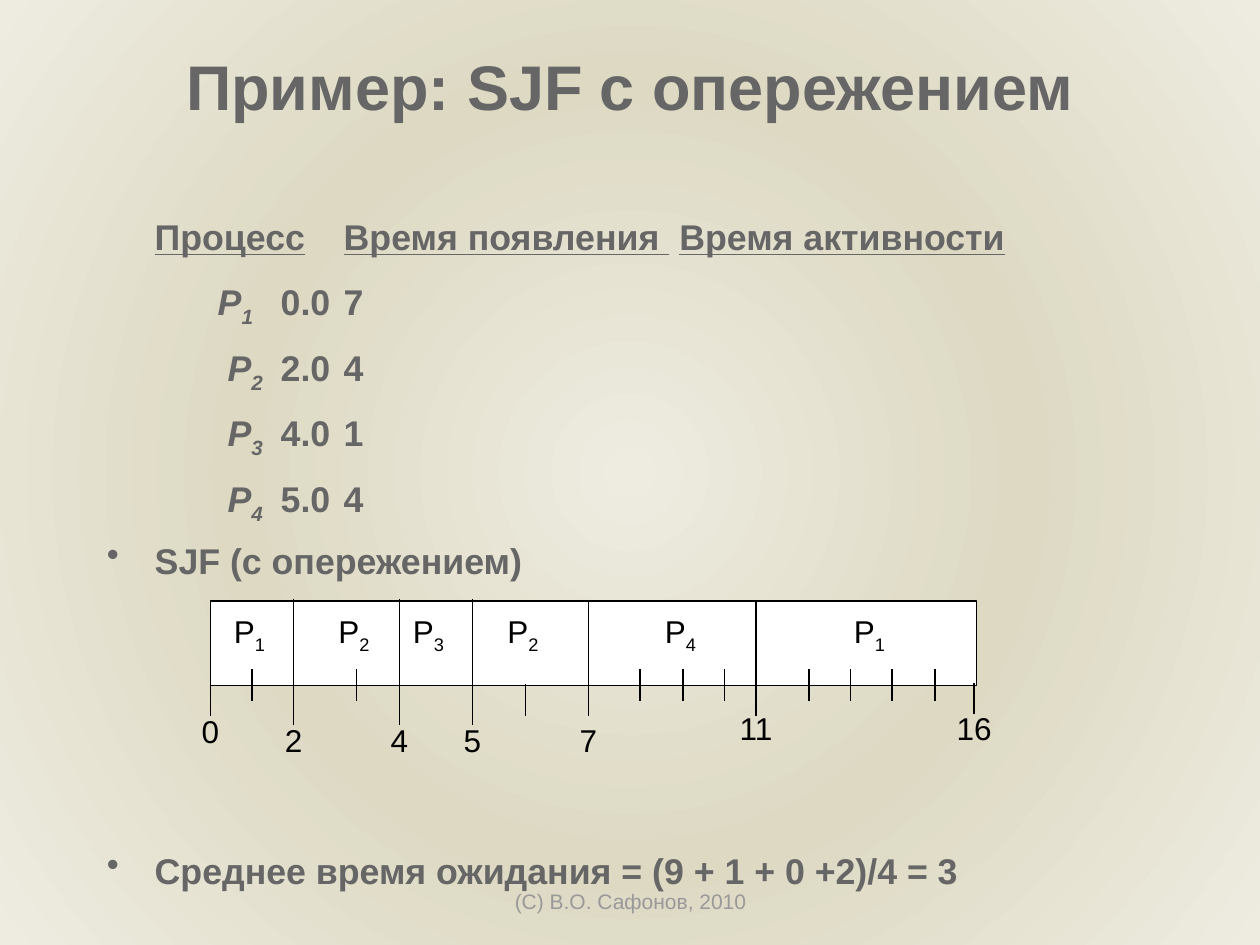
from dataclasses import dataclass

import lxml.etree
import pptx
import pptx.dml.color
import pptx.enum.shapes
import pptx.enum.text
import pptx.oxml
import pptx.oxml.ns
import pptx.slide
import pptx.util

Inches = pptx.util.Inches
Pt = pptx.util.Pt
qn = pptx.oxml.ns.qn
ALIGN = pptx.enum.text.PP_ALIGN
ANCHOR = pptx.enum.text.MSO_ANCHOR

FONT = "Arial"
COLORS = {
    "edge": "EEECE1",
    "ring": "DDD9C3",
    "text": "666666",
    "footer": "999999",
    "chart": "000000",
    "bar": "FFFFFF",
}


@dataclass
class Run:
    text: str
    italic: bool = False
    underline: bool = False
    subscript: bool = False
    spacing: float = 0  # extra points after each letter


@dataclass
class Paragraph:
    runs: list[Run]
    space_before: float = 0
    bullet: bool = False


@dataclass
class Process:
    number: int
    arrival: str
    burst: int


@dataclass
class Boundary:
    time: int
    x: float
    top: float
    bottom: float
    label_top: float


@dataclass
class Segment:
    process: int
    center: float


PROCESSES = [
    Process(1, "0.0", 7),
    Process(2, "2.0", 4),
    Process(3, "4.0", 1),
    Process(4, "5.0", 4),
]
BAR_LEFT, BAR_TOP, BAR_WIDTH, BAR_HEIGHT = 1.67, 4.77, 6.08, 0.67
BOUNDARIES = [
    Boundary(0, 1.67, 4.77, 5.68, 5.6),
    Boundary(2, 2.33, 4.75, 5.75, 5.67),
    Boundary(4, 3.17, 4.75, 5.75, 5.67),
    Boundary(5, 3.75, 4.75, 5.75, 5.67),
    Boundary(7, 4.67, 4.77, 5.68, 5.67),
    Boundary(11, 6, 4.77, 5.68, 5.58),
    Boundary(16, 7.73, 5.42, 5.67, 5.58),
]
SEGMENTS = [
    Segment(1, 1.98),
    Segment(2, 2.81),
    Segment(3, 3.4),
    Segment(2, 4.15),
    Segment(4, 5.4),
    Segment(1, 6.9),
]
MINOR_TICKS = [2, 2.83, 5.08, 5.42, 5.75, 6.42, 6.75, 7.08, 7.42]


def rgb(name: str) -> pptx.dml.color.RGBColor:
    return pptx.dml.color.RGBColor.from_string(COLORS[name])


def set_background(slide: pptx.slide.Slide) -> None:
    """Radial gradient: light centre, darker ring, light edge."""
    stops = "".join(
        f'<a:gs pos="{position}"><a:srgbClr val="{COLORS[name]}"/></a:gs>'
        for position, name in ((0, "edge"), (50000, "ring"), (100000, "edge"))
    )
    background = pptx.oxml.parse_xml(
        f'<p:bg {pptx.oxml.ns.nsdecls("p", "a")}><p:bgPr><a:gradFill rotWithShape="1">'
        f'<a:gsLst>{stops}</a:gsLst><a:path path="circle">'
        '<a:fillToRect l="50000" t="50000" r="50000" b="50000"/></a:path>'
        "</a:gradFill><a:effectLst/></p:bgPr></p:bg>"
    )
    slide.element.cSld.insert(0, background)


def set_hanging_indent(paragraph, bullet: bool) -> None:
    properties = paragraph._p.get_or_add_pPr()
    properties.set("marL", str(Inches(0.38)))
    properties.set("indent", str(-Inches(0.38)))
    if bullet:
        lxml.etree.SubElement(properties, qn("a:buChar")).set("char", "•")
    else:
        lxml.etree.SubElement(properties, qn("a:buNone"))


def add_text(slide: pptx.slide.Slide, box: tuple[float, float, float, float],
             paragraphs: list[Paragraph], *, size: float, color: str,
             bold: bool = False, align=ALIGN.CENTER, anchor=ANCHOR.MIDDLE,
             wrap: bool = True, line_spacing: float | None = None,
             hanging: bool = False) -> None:
    shape = slide.shapes.add_textbox(*map(Inches, box))
    frame = shape.text_frame
    frame.word_wrap = wrap
    frame.vertical_anchor = anchor
    for index, content in enumerate(paragraphs):
        paragraph = frame.add_paragraph() if index else frame.paragraphs[0]
        if hanging:
            set_hanging_indent(paragraph, content.bullet)
        paragraph.alignment = align
        paragraph.line_spacing = line_spacing
        paragraph.space_before = Pt(content.space_before)
        for part in content.runs:
            run = paragraph.add_run()
            run.text = part.text
            font = run.font
            font.name, font.size, font.bold = FONT, Pt(size), bold
            font.italic, font.underline = part.italic, part.underline
            font.color.rgb = rgb(color)
            properties = run._r.get_or_add_rPr()
            if part.subscript:
                properties.set("baseline", "-25000")
            if part.spacing:
                properties.set("spc", str(round(part.spacing * 100)))


def add_line(slide: pptx.slide.Slide, x: float, top: float, bottom: float) -> None:
    line = slide.shapes.add_connector(
        pptx.enum.shapes.MSO_CONNECTOR.STRAIGHT,
        Inches(x), Inches(top), Inches(x), Inches(bottom))
    line.line.color.rgb = rgb("chart")
    line.line.width = Pt(0.75)
    lxml.etree.SubElement(line._element.spPr, qn("a:effectLst"))


def add_chart_label(slide: pptx.slide.Slide, center: float, top: float,
                    runs: list[Run]) -> None:
    width = 0.48
    add_text(slide, (center - width / 2, top, width, 0.4), [Paragraph(runs)],
             size=18, color="chart", wrap=False)


def process_row(process: Process) -> Paragraph:
    lead = "\t\t" if process.number == 1 else "\t\t "
    return Paragraph([
        Run(lead),
        Run("P", italic=True),
        Run(str(process.number), italic=True, subscript=True),
        Run(f"\t{process.arrival}\t{process.burst}"),
    ], space_before=18)


def add_gantt_chart(slide: pptx.slide.Slide) -> None:
    bar = slide.shapes.add_shape(
        pptx.enum.shapes.MSO_SHAPE.RECTANGLE,
        Inches(BAR_LEFT), Inches(BAR_TOP), Inches(BAR_WIDTH), Inches(BAR_HEIGHT))
    bar.shadow.inherit = False
    bar.fill.solid()
    bar.fill.fore_color.rgb = rgb("bar")
    bar.line.color.rgb = rgb("chart")
    bar.line.width = Pt(0.75)

    for boundary in BOUNDARIES:
        add_line(slide, boundary.x, boundary.top, boundary.bottom)
        add_chart_label(slide, boundary.x, boundary.label_top, [Run(str(boundary.time))])
    for x in MINOR_TICKS:
        add_line(slide, x, 5.31, 5.56)
    add_line(slide, 4.17, 5.43, 5.68)  # lower tick at time 6
    for segment in SEGMENTS:
        add_chart_label(slide, segment.center, 4.83,
                        [Run("P"), Run(str(segment.process), subscript=True)])


def main() -> None:
    presentation = pptx.Presentation()
    presentation.slide_width, presentation.slide_height = Inches(10), Inches(7.5)
    slide = presentation.slides.add_slide(presentation.slide_layouts[6])
    set_background(slide)

    # Footer and title
    add_text(slide, (3.42, 6.95, 3.17, 0.4),
             [Paragraph([Run("(C) В.О. Сафонов, 2010")])], size=12, color="footer")
    add_text(slide, (0.5, 0.3, 9, 0.75),
             [Paragraph([Run("Пример: SJF с опережением")])],
             size=36, color="text", bold=True)

    # Process list and conclusions, with room left for the chart
    header = Paragraph([
        Run("\t"), Run("Процесс", underline=True), Run("\t"),
        Run("Время появления", underline=True),
        Run(" ", underline=True, spacing=5.7),
        Run("Время активности", underline=True),
    ])
    conclusions = [
        Paragraph([Run("SJF (с опережением)")], 18, True),
        Paragraph([Run("Среднее время ожидания = (9 + 1 + 0 +2)/4 = 3")], 160, True),
    ]
    add_text(slide, (0.75, 1.75, 8.67, 5.33),
             [header, *map(process_row, PROCESSES), *conclusions],
             size=20.4, color="text", bold=True, align=ALIGN.LEFT,
             anchor=ANCHOR.TOP, line_spacing=0.7, hanging=True)

    add_gantt_chart(slide)
    presentation.save("out.pptx")


if __name__ == "__main__":
    main()
